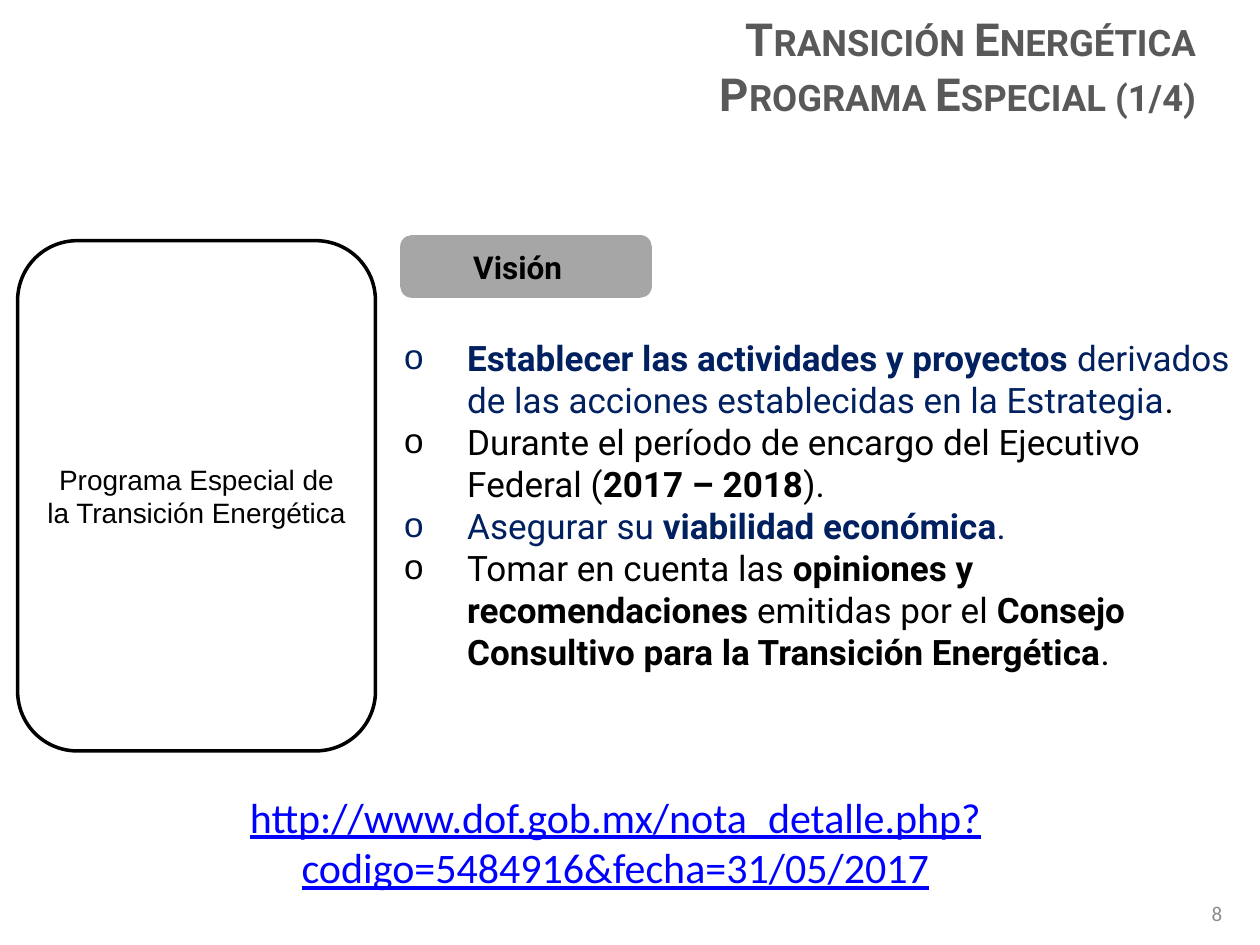
from pptx import Presentation
from pptx.dml.color import RGBColor
from pptx.enum.shapes import MSO_SHAPE
from pptx.enum.text import MSO_ANCHOR, PP_ALIGN
from pptx.oxml.ns import qn
from pptx.util import Inches, Pt
from lxml.etree import SubElement

BLACK = RGBColor(0x00, 0x00, 0x00)
WHITE = RGBColor(0xFF, 0xFF, 0xFF)
NAVY = RGBColor(0x00, 0x20, 0x60)
BLUE = RGBColor(0x00, 0x00, 0xFF)
SILVER = RGBColor(0xA6, 0xA6, 0xA6)
GRAY = RGBColor(0x8C, 0x8C, 0x8C)
DARK = RGBColor(0x59, 0x59, 0x59)

deck = Presentation()
deck.slide_width, deck.slide_height = Inches(10), Inches(7.5)
slide = deck.slides.add_slide(deck.slide_layouts[6])


def style(font, name, size, color, bold=False):
    font.name, font.size, font.bold = name, Pt(size), bold
    font.color.rgb = color


def write(shape, text, align, name, size, color, bold=False):
    """Fill a shape with text, one paragraph per line, and return its runs."""
    frame = shape.text_frame
    frame.word_wrap = True
    frame.text = text
    runs = []
    for para in frame.paragraphs:
        para.alignment = align
        for run in para.runs:
            style(run.font, name, size, color, bold)
            runs.append(run)
    return runs


# Page number
number = slide.shapes.add_textbox(Inches(7.47), Inches(7.05), Inches(2.33), Inches(0.4))
number.text_frame.vertical_anchor = MSO_ANCHOR.MIDDLE
write(number, "8", PP_ALIGN.RIGHT, "Calibri", 12, GRAY)

# Title in small capitals
title = slide.shapes.add_textbox(Inches(2.48), Inches(0.04), Inches(7.11), Inches(0.98))
for run in write(title, "Transición Energética\nPrograma Especial (1/4)",
                 PP_ALIGN.RIGHT, "Roboto", 26, DARK, True):
    run.font._element.set("cap", "small")

# Rounded boxes: place, fill, line, text, font, size, bold, right margin
boxes = [
    ((0.14, 1.91, 2.84, 4.05), WHITE, BLACK,
     "Programa Especial de la Transición Energética", "Arial", 16, False, 0.1),
    ((3.19, 1.88, 1.97, 0.47), SILVER, SILVER, "Visión", "Roboto", 18, True, 0.23),
]
for place, fill, line, text, name, size, bold, margin in boxes:
    box = slide.shapes.add_shape(MSO_SHAPE.ROUNDED_RECTANGLE, *map(Inches, place))
    box.shadow.inherit = False
    box.fill.solid()
    box.fill.fore_color.rgb = fill
    box.line.color.rgb = line
    box.line.width = Pt(2)
    box.text_frame.vertical_anchor = MSO_ANCHOR.MIDDLE
    box.text_frame.margin_right = Inches(margin)
    write(box, text, PP_ALIGN.CENTER, name, size, BLACK, bold)

# Vision points: each run is text, colour, bold
points = [
    [("Establecer las actividades y proyectos ", NAVY, True),
     ("derivados de las acciones establecidas en la Estrategia", NAVY, False),
     (".", BLACK, False)],
    [("Durante el período de encargo del Ejecutivo Federal (", BLACK, False),
     ("2017 – 2018", BLACK, True), (").", BLACK, False)],
    [("Asegurar su ", NAVY, False), ("viabilidad económica", NAVY, True),
     (".", NAVY, False)],
    [("Tomar en cuenta las ", BLACK, False),
     ("opiniones y recomendaciones", BLACK, True),
     (" emitidas por el ", BLACK, False),
     ("Consejo Consultivo para la Transición Energética", BLACK, True),
     (".", BLACK, False)],
]
body = slide.shapes.add_textbox(Inches(3.11), Inches(2.62), Inches(6.75), Inches(3.43))
frame = body.text_frame
frame.word_wrap = True
for index, point in enumerate(points):
    para = frame.add_paragraph() if index else frame.paragraphs[0]
    props = para._p.get_or_add_pPr()
    props.set("marL", str(Inches(0.5)))
    props.set("indent", str(-Inches(0.5)))
    SubElement(props, qn("a:buFont")).set("typeface", "Arial")
    SubElement(props, qn("a:buChar")).set("char", "o")
    for text, color, bold in point:
        run = para.add_run()
        run.text = text
        style(run.font, "Roboto", 20, color, bold)

# Source address
source = slide.shapes.add_textbox(Inches(0.2), Inches(6.23), Inches(9.37), Inches(0.91))
for run in write(source,
                 "http://www.dof.gob.mx/nota_detalle.php?codigo=5484916&fecha=31/05/2017",
                 PP_ALIGN.CENTER, "Calibri", 24, BLUE):
    run.font.underline = True

deck.save("out.pptx")
